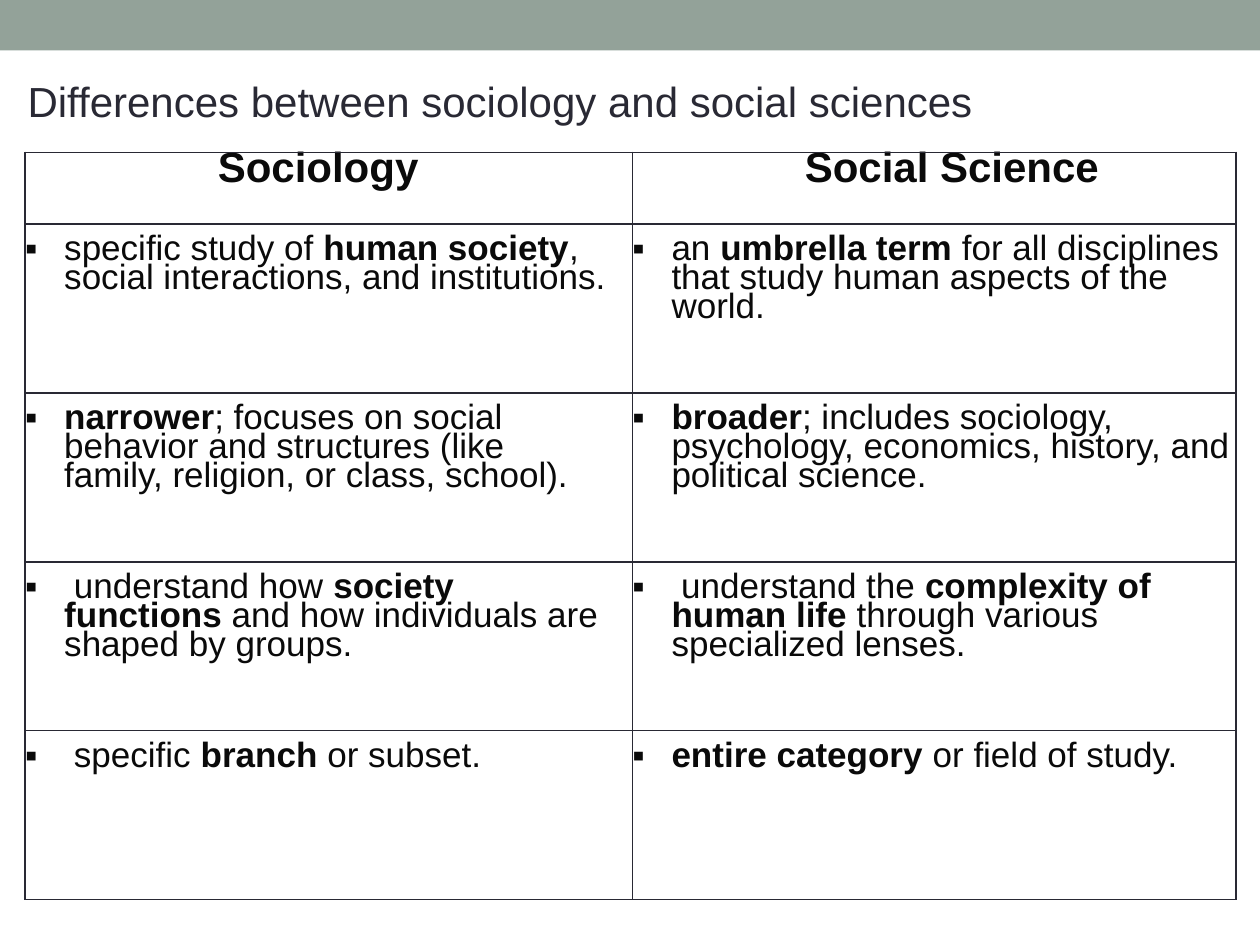
"""Build a slide that compares sociology with the social sciences in a table."""
import dataclasses
import typing

import lxml.etree
import pptx
import pptx.dml.color
import pptx.enum.shapes
import pptx.enum.text
import pptx.oxml.ns
import pptx.util

Inches = pptx.util.Inches
Pt = pptx.util.Pt
Color = pptx.dml.color.RGBColor
qn = pptx.oxml.ns.qn


@dataclasses.dataclass(frozen=True)
class Theme:
    font: str = "Arial"
    band: Color = Color(0x93, 0xA2, 0x99)
    title: Color = Color(0x29, 0x29, 0x34)
    text: Color = Color(0x0A, 0x0A, 0x0A)
    paper: Color = Color(0xFF, 0xFF, 0xFF)
    heading_size: Pt = Pt(24)
    body_size: Pt = Pt(20)
    line_spacing: Pt = Pt(16.5)
    space_after: Pt = Pt(8)
    border_width: Pt = Pt(1)


class Point(typing.NamedTuple):
    before: str
    bold: str
    after: str


class Column(typing.NamedTuple):
    heading: str
    width: float
    heading_left: float
    margin_right: float
    points: tuple[Point, ...]


THEME = Theme()
HEADER_HEIGHT, ROW_HEIGHT = 0.57, 1.34
HEADER_PADDING, ROW_PADDING = 0.08, 0.12
BULLET_INDENT = 0.31
COLUMNS = (
    Column("Sociology", 4.82, 0, 0.17, (
        Point("specific study of ", "human society",
              ", social interactions, and institutions."),
        Point("", "narrower", "; focuses on social behavior and structures "
              "(like family, religion, or class, school)."),
        Point(" understand how ", "society functions",
              " and how individuals are shaped by groups."),
        Point(" specific ", "branch", " or subset."),
    )),
    Column("Social Science", 4.79, 0.28, 0, (
        Point("an ", "umbrella term",
              " for all disciplines that study human aspects of the world."),
        Point("", "broader", "; includes sociology, psychology, economics, "
              "history, and political science."),
        Point(" understand the ", "complexity of human life",
              " through various specialized lenses."),
        Point("", "entire category", " or field of study."),
    )),
)


def format_run(run, size: Pt, color: Color, bold: bool = False) -> None:
    run.font.name = THEME.font
    run.font.size = size
    run.font.bold = bold
    run.font.color.rgb = color


def add_band(slide) -> None:
    band = slide.shapes.add_shape(
        pptx.enum.shapes.MSO_SHAPE.RECTANGLE, 0, 0, Inches(10), Inches(0.4))
    band.shadow.inherit = False
    band.fill.solid()
    band.fill.fore_color.rgb = THEME.band
    band.line.fill.background()


def add_title(slide, text: str) -> None:
    title = slide.shapes.add_textbox(
        Inches(0.12), Inches(0.52), Inches(9.61), Inches(6.93))
    frame = title.text_frame
    frame.word_wrap = True
    frame.margin_top = Inches(0.08)
    frame.text = text
    format_run(frame.paragraphs[0].runs[0], THEME.heading_size, THEME.title)


def add_borders(cell) -> None:
    properties = cell._tc.get_or_add_tcPr()
    for index, side in enumerate(("lnL", "lnR", "lnT", "lnB")):
        line = lxml.etree.Element(qn(f"a:{side}"), w=str(THEME.border_width))
        fill = lxml.etree.SubElement(line, qn("a:solidFill"))
        lxml.etree.SubElement(fill, qn("a:srgbClr"), val=str(THEME.title))
        properties.insert(index, line)


def prepare_cell(cell, left: float, right: float, padding: float):
    cell.margin_left, cell.margin_right = Inches(left), Inches(right)
    cell.margin_top = cell.margin_bottom = Inches(padding)
    cell.fill.solid()
    cell.fill.fore_color.rgb = THEME.paper
    add_borders(cell)
    paragraph = cell.text_frame.paragraphs[0]
    paragraph.line_spacing = THEME.line_spacing
    paragraph.space_after = THEME.space_after
    return paragraph


def fill_heading(cell, column: Column) -> None:
    paragraph = prepare_cell(
        cell, column.heading_left, column.margin_right, HEADER_PADDING)
    paragraph.text = column.heading
    paragraph.alignment = pptx.enum.text.PP_ALIGN.CENTER
    format_run(paragraph.runs[0], THEME.heading_size, THEME.text, bold=True)


def fill_point(cell, column: Column, point: Point) -> None:
    paragraph = prepare_cell(cell, 0, column.margin_right, ROW_PADDING)
    properties = paragraph._p.get_or_add_pPr()
    properties.set("marL", str(Inches(BULLET_INDENT)))
    properties.set("indent", str(-Inches(BULLET_INDENT)))
    lxml.etree.SubElement(properties, qn("a:buFont"), typeface=THEME.font)
    lxml.etree.SubElement(properties, qn("a:buChar"), char="▪")
    for text, bold in zip(point, (False, True, False)):
        if text:
            run = paragraph.add_run()
            run.text = text
            format_run(run, THEME.body_size, THEME.text, bold)


def add_comparison(slide, columns: tuple[Column, ...]) -> None:
    row_heights = [HEADER_HEIGHT] + [ROW_HEIGHT] * len(columns[0].points)
    table = slide.shapes.add_table(
        len(row_heights), len(columns), Inches(0.2), Inches(1.21),
        Inches(sum(column.width for column in columns)),
        Inches(sum(row_heights))).table
    for row, height in zip(table.rows, row_heights):
        row.height = Inches(height)
    for index, column in enumerate(columns):
        table.columns[index].width = Inches(column.width)
        fill_heading(table.cell(0, index), column)
        for row_index, point in enumerate(column.points, start=1):
            fill_point(table.cell(row_index, index), column, point)


def main() -> None:
    presentation = pptx.Presentation()
    presentation.slide_width = Inches(10)
    presentation.slide_height = Inches(7.5)
    slide = presentation.slides.add_slide(presentation.slide_layouts[6])
    add_band(slide)
    add_title(slide, "Differences between sociology and social sciences")
    add_comparison(slide, COLUMNS)
    presentation.save("out.pptx")


if __name__ == "__main__":
    main()
